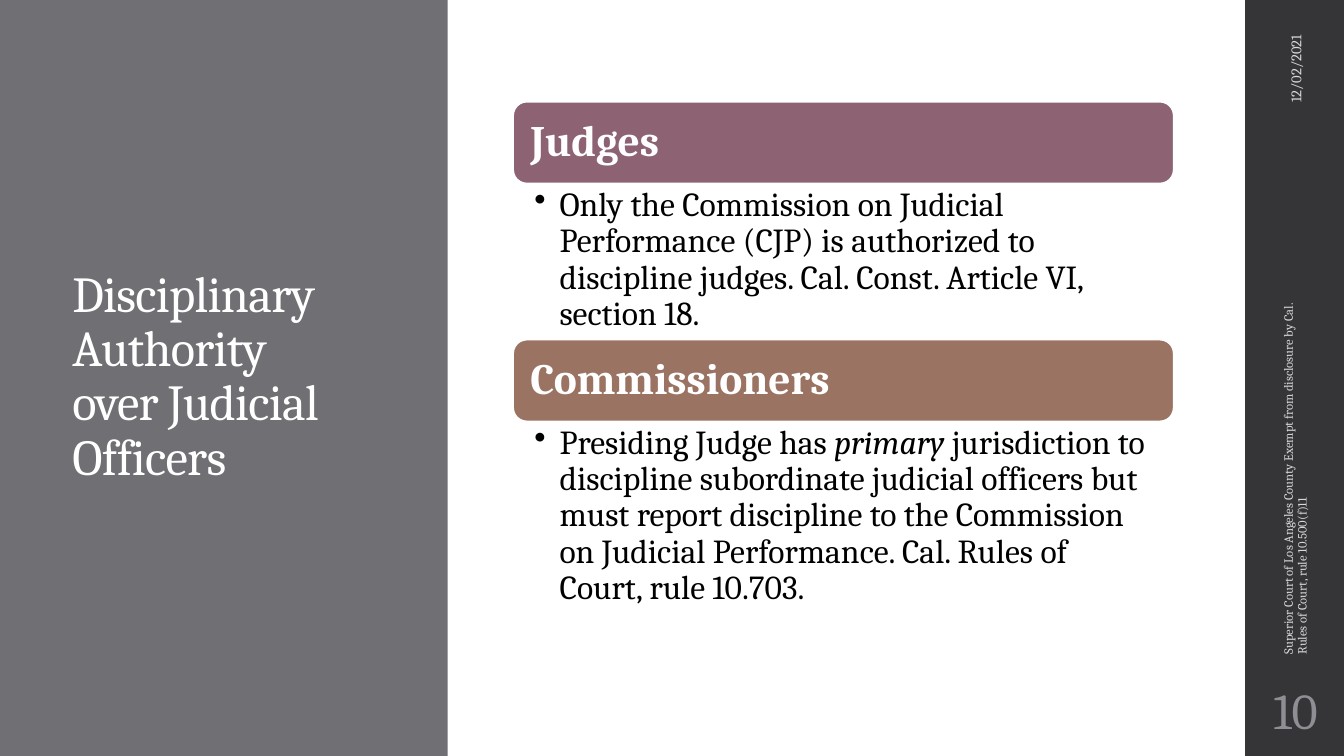
from dataclasses import dataclass

from lxml import etree
from pptx import Presentation
from pptx.dml.color import RGBColor as Color
from pptx.enum.shapes import MSO_SHAPE as Shape
from pptx.enum.text import MSO_ANCHOR as Anchor, PP_ALIGN as Align
from pptx.oxml.ns import qn
from pptx.util import Inches, Pt


@dataclass(frozen=True)
class Theme:
    font: str = "Cambria"
    white: str = "FFFFFF"
    black: str = "000000"
    panel: str = "6F6F74"
    sidebar: str = "353537"
    pale: str = "D9D9DB"
    number: str = "8E8E94"
    judges: str = "8D6374"
    commissioners: str = "9B7362"
    title_size: float = 36
    heading_size: float = 31
    body_size: float = 24
    date_size: float = 10.5
    footer_size: float = 9


theme = Theme()
deck = Presentation()
deck.slide_width, deck.slide_height = Inches(13.33), Inches(7.5)
page = deck.slides.add_slide(deck.slide_layouts[6])


def add_block(kind, left, top, width, height, fill):
    block = page.shapes.add_shape(
        kind, Inches(left), Inches(top), Inches(width), Inches(height))
    block.shadow.inherit = False
    block.fill.solid()
    block.fill.fore_color.rgb = Color.from_string(fill)
    block.line.fill.background()
    return block


def write(box, pieces, size, color, align=Align.LEFT, anchor=Anchor.MIDDLE,
          insets=(0.1, 0.05, 0.1, 0.05), bold=False, spacing=0.9):
    frame = box.text_frame
    frame.word_wrap = True
    frame.vertical_anchor = anchor
    (frame.margin_left, frame.margin_top,
     frame.margin_right, frame.margin_bottom) = map(Inches, insets)
    para = frame.paragraphs[0]
    para.alignment = align
    para.line_spacing = spacing
    for text, italic in pieces:
        span = para.add_run()
        span.text = text
        span.font.name = theme.font
        span.font.size = Pt(size)
        span.font.bold = bold
        span.font.italic = italic
        span.font.color.rgb = Color.from_string(color)
    return para


add_block(Shape.RECTANGLE, 0, 0, 4.44, 7.5, theme.panel)
title = page.shapes.add_textbox(Inches(0.62), Inches(0.91), Inches(2.97), Inches(5.67))
title_para = write(title, [("Disciplinary Authority over Judicial Officers", False)],
                   theme.title_size, theme.white)
title_para.runs[0]._r.get_or_add_rPr().set("spc", "-50")

add_block(Shape.RECTANGLE, 12.35, 0, 0.98, 7.5, theme.sidebar)
date = page.shapes.add_textbox(Inches(11.81), Inches(1.09), Inches(2.08), Inches(0.4))
date.rotation = 270
write(date, [("12/02/2021", False)], theme.date_size, theme.pale, Align.RIGHT, spacing=1.0)

footer = page.shapes.add_textbox(Inches(10.89), Inches(4.43), Inches(3.92), Inches(0.4))
footer.rotation = 270
write(footer, [("Superior Court of Los Angeles County Exempt from disclosure by Cal. "
                "Rules of Court, rule 10.500(f)11", False)],
      theme.footer_size, theme.pale)

number = page.shapes.add_textbox(Inches(12.35), Inches(6.75), Inches(1), Inches(0.65))
write(number, [("10", False)], theme.title_size, theme.number, Align.CENTER,
      insets=(0.05,) * 4)

sections = [
    ("Judges", theme.judges, 1.01, 1.54, [
        ("Only the Commission on Judicial Performance (CJP) is authorized to "
         "discipline judges. Cal. Const. Article VI, section 18.", False)]),
    ("Commissioners", theme.commissioners, 3.37, 2.32, [
        ("Presiding Judge has ", False),
        ("primary", True),
        (" jurisdiction to discipline subordinate judicial officers but must report "
         "discipline to the Commission on Judicial Performance. Cal. Rules of Court, "
         "rule 10.703.", False)]),
]
left, width, heading_height = 5.09, 6.55, 0.81
for name, fill, top, body_height, pieces in sections:
    heading = add_block(Shape.ROUNDED_RECTANGLE, left, top, width, heading_height, fill)
    heading.line.color.rgb = Color.from_string(theme.white)
    heading.line.width = Pt(1.1)
    write(heading, [(name, False)], theme.heading_size, theme.white,
          insets=(0.13,) * 4, bold=True)

    body = page.shapes.add_textbox(Inches(left), Inches(top + heading_height),
                                   Inches(width), Inches(body_height))
    para = write(body, pieces, theme.body_size, theme.black, anchor=Anchor.TOP,
                 insets=(0.21, 0.04, 0.24, 0.04))
    properties = para._p.get_or_add_pPr()
    properties.set("marL", str(Inches(0.25)))
    properties.set("indent", str(Inches(-0.25)))
    etree.SubElement(properties, qn("a:buChar")).set("char", "•")

deck.save("out.pptx")
